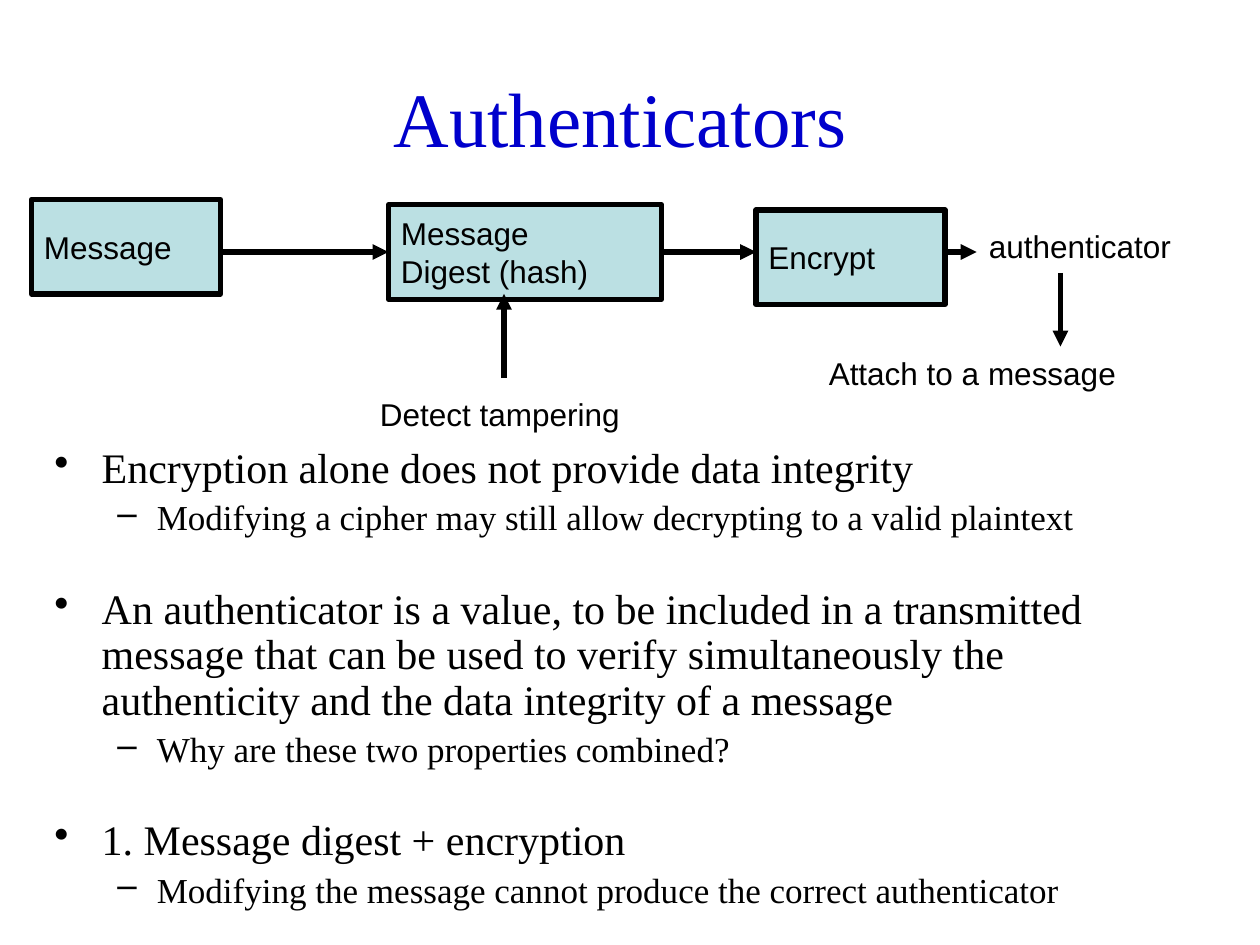
from lxml import etree
from pptx import Presentation
from pptx.dml.color import RGBColor
from pptx.enum.shapes import MSO_CONNECTOR, MSO_SHAPE
from pptx.enum.text import MSO_ANCHOR, PP_ALIGN
from pptx.oxml.ns import qn
from pptx.util import Pt

RECTANGLE = MSO_SHAPE.RECTANGLE
STRAIGHT = MSO_CONNECTOR.STRAIGHT
TOP, MIDDLE = MSO_ANCHOR.TOP, MSO_ANCHOR.MIDDLE
LEFT, CENTER = PP_ALIGN.LEFT, PP_ALIGN.CENTER
LEFT_SIDE, RIGHT_SIDE = 1, 3

BLACK = RGBColor(0x00, 0x00, 0x00)
BLUE = RGBColor(0x00, 0x00, 0xCC)
TEAL = RGBColor(0xBB, 0xE0, 0xE3)

# Content; all lengths in points
TITLE = "Authenticators "
TITLE_AREA = (36, 21.6, 648, 90)
BODY_AREA = (24, 252, 666, 288)
TOPICS = [
    ("Encryption alone does not provide data integrity",
     "Modifying a cipher may still allow decrypting to a valid plaintext"),
    ("An authenticator is a value, to be included in a transmitted message that can be "
     "used to verify simultaneously the authenticity and the data integrity of a message",
     "Why are these two properties combined?"),
    ("1. Message digest + encryption",
     "Modifying the message cannot produce the correct authenticator"),
]
BOX_HEIGHT = 54
BOXES = {  # name: (lines, left, top, width)
    "message": (["Message"], 18, 114, 108),
    "digest": (["Message", "Digest (hash)"], 222, 117, 156),
    "encrypt": (["Encrypt"], 432, 120, 108),
}
LABEL_HEIGHT = 31
LABELS = [  # text, left, top, width
    ("Detect tampering", 210, 222, 178),
    ("authenticator", 558, 126, 141),
    ("Attach to a message", 466.5, 198.5, 209),
]
FLOW_Y = 144
ARROWS = [  # start, end, joined start, joined end
    ((126, FLOW_Y), (222, FLOW_Y), None, "digest"),
    ((378, FLOW_Y), (432, FLOW_Y), "digest", None),
    ((540, FLOW_Y), (558, FLOW_Y), None, None),
    ((288, 216), (288, 168), None, None),
    ((606, 156), (606, 198), None, None),
]
MAIN = {"bullet": "•", "size": 24, "margin": 27, "indent": -27}
DETAIL = {"bullet": "–", "size": 20, "margin": 58.5, "indent": -22.5}
FIRST_GAP, TOPIC_GAP, DETAIL_GAP = 5, 28.5, 4.5


def write(frame, lines, size, font, color=BLACK, align=LEFT, anchor=TOP, wrap=True):
    for name, value in {"word_wrap": wrap, "vertical_anchor": anchor}.items():
        setattr(frame, name, value)
    frame.text = "\n".join(lines)
    for paragraph in frame.paragraphs:
        paragraph.alignment = align
        style = {"size": Pt(size), "name": font}
        for name, value in style.items():
            setattr(paragraph.runs[0].font, name, value)
        paragraph.runs[0].font.color.rgb = color


def add_text(slide, area, lines, *args, **options):
    box = slide.shapes.add_textbox(*map(Pt, area))
    write(box.text_frame, lines, *args, **options)
    return box


def set_bullet(paragraph, level, gap):
    paragraph.line_spacing = 0.9
    paragraph.space_before = Pt(gap)
    paragraph.runs[0].font.size = Pt(level["size"])
    properties = paragraph._p.get_or_add_pPr()
    properties.set("marL", str(Pt(level["margin"])))
    properties.set("indent", str(Pt(level["indent"])))
    etree.SubElement(properties, qn("a:buChar"), char=level["bullet"])


def add_box(slide, lines, left, top, width):
    box = slide.shapes.add_shape(RECTANGLE, *map(Pt, (left, top, width, BOX_HEIGHT)))
    box.shadow.inherit = False
    box.fill.solid()
    box.fill.fore_color.rgb = TEAL
    box.line.color.rgb = BLACK
    box.line.width = Pt(3)
    write(box.text_frame, lines, 18, "Arial", anchor=MIDDLE)
    return box


def add_arrow(slide, start, end):
    arrow = slide.shapes.add_connector(STRAIGHT, *map(Pt, start + end))
    arrow.line.color.rgb = BLACK
    arrow.line.width = Pt(3)
    etree.SubElement(arrow.line._get_or_add_ln(), qn("a:tailEnd"), type="triangle")
    etree.SubElement(arrow._element.spPr, qn("a:effectLst"))
    return arrow


def main():
    presentation = Presentation()
    presentation.slide_width, presentation.slide_height = Pt(720), Pt(540)
    slide = presentation.slides.add_slide(presentation.slide_layouts[6])

    # Title
    add_text(slide, TITLE_AREA, [TITLE], 44, "Times New Roman", BLUE, CENTER, MIDDLE)

    # Bulleted topics, each with one detail line
    lines = [line for topic in TOPICS for line in topic]
    body = add_text(slide, BODY_AREA, lines, 24, "Times New Roman")
    for index, paragraph in enumerate(body.text_frame.paragraphs):
        if index % 2:
            set_bullet(paragraph, DETAIL, DETAIL_GAP)
        else:
            set_bullet(paragraph, MAIN, TOPIC_GAP if index else FIRST_GAP)

    # Flow diagram
    boxes = {name: add_box(slide, *box) for name, box in BOXES.items()}
    for text, left, top, width in LABELS:
        add_text(slide, (left, top, width, LABEL_HEIGHT), [text], 18, "Arial", wrap=False)
    for start, end, source, target in ARROWS:
        arrow = add_arrow(slide, start, end)
        if source:
            arrow.begin_connect(boxes[source], RIGHT_SIDE)
        if target:
            arrow.end_connect(boxes[target], LEFT_SIDE)

    presentation.save("out.pptx")


if __name__ == "__main__":
    main()
